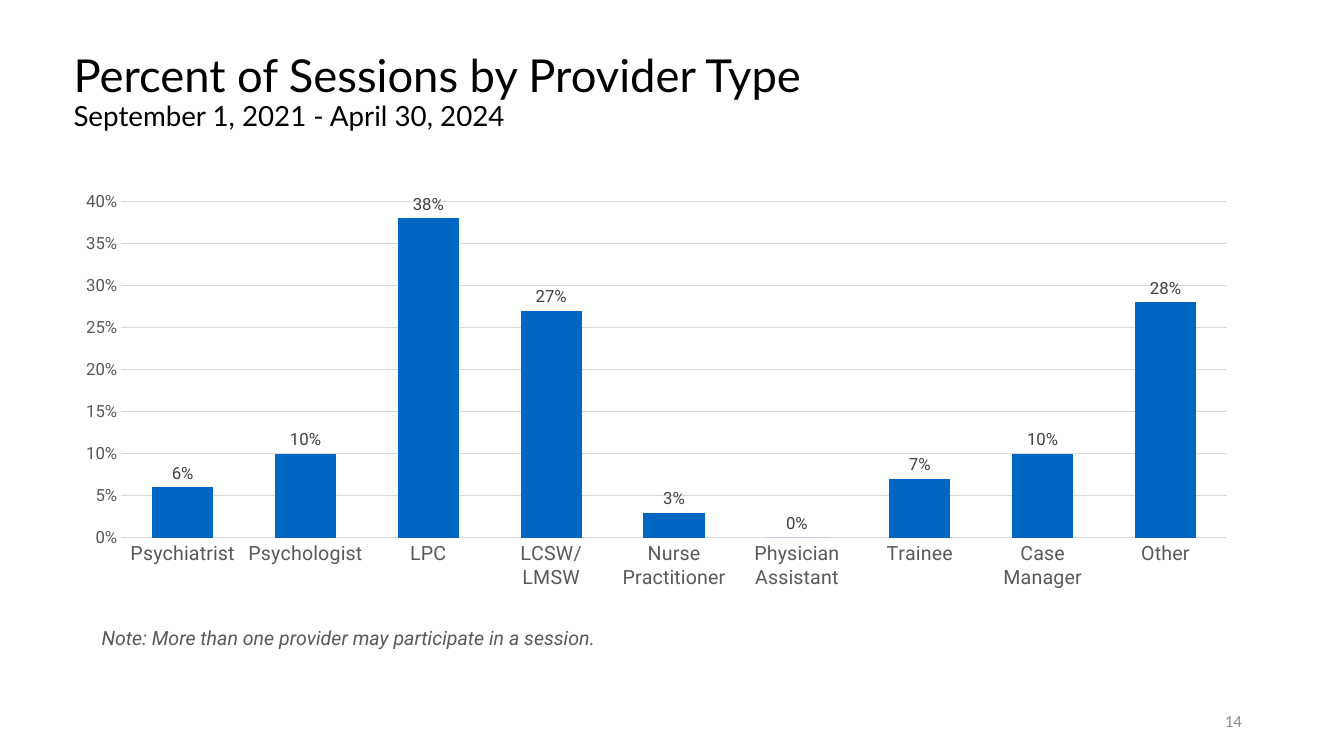
from dataclasses import dataclass

from pptx import Presentation
from pptx.chart.data import CategoryChartData
from pptx.dml.color import RGBColor
from pptx.enum.chart import XL_CHART_TYPE, XL_LABEL_POSITION, XL_TICK_MARK
from pptx.enum.text import MSO_ANCHOR, MSO_AUTO_SIZE, PP_ALIGN
from pptx.slide import Slide
from pptx.text.text import Font
from pptx.util import Cm, Pt

COLUMNS = XL_CHART_TYPE.COLUMN_CLUSTERED
OUTSIDE_END = XL_LABEL_POSITION.OUTSIDE_END
NO_TICK = XL_TICK_MARK.NONE
TOP, MIDDLE = MSO_ANCHOR.TOP, MSO_ANCHOR.MIDDLE
FIXED, GROW = MSO_AUTO_SIZE.NONE, MSO_AUTO_SIZE.SHAPE_TO_FIT_TEXT
LEFT, RIGHT = PP_ALIGN.LEFT, PP_ALIGN.RIGHT

GRAY, RULE, BLUE = "595959", "D9D9D9", "0067C3"
TITLE_ONLY = 5

SESSION_SHARES = {
    "Psychiatrist": 0.06,
    "Psychologist": 0.10,
    "LPC": 0.38,
    "LCSW/LMSW": 0.27,
    "Nurse Practitioner": 0.03,
    "Physician Assistant": 0,
    "Trainee": 0.07,
    "Case Manager": 0.10,
    "Other": 0.28,
}


@dataclass
class Area:
    left: float
    top: float
    width: float
    height: float

    def lengths(self) -> tuple[Cm, Cm, Cm, Cm]:
        return Cm(self.left), Cm(self.top), Cm(self.width), Cm(self.height)


@dataclass
class TextStyle:
    name: str
    size: float
    color: str
    italic: bool = False


@dataclass
class Caption:
    text: str
    area: Area
    style: TextStyle
    alignment: PP_ALIGN
    anchor: MSO_ANCHOR
    auto_size: MSO_AUTO_SIZE
    wrap: bool


CAPTIONS = [
    Caption("14", Area(23.93, 17.65, 7.62, 1.02), TextStyle("Calibri", 12, "8C8C8C"),
            RIGHT, MIDDLE, FIXED, True),
    Caption("Note: More than one provider may participate in a session.",
            Area(2.31, 15.65, 13.39, 0.86), TextStyle("Roboto", 14, GRAY, True),
            LEFT, TOP, GROW, False),
]


def rgb(color: str) -> RGBColor:
    return RGBColor.from_string(color)


def format_font(font: Font, style: TextStyle) -> None:
    font.name = style.name
    font.size = Pt(style.size)
    font.color.rgb = rgb(style.color)
    font.italic = style.italic
    font.bold = False


def add_title(slide: Slide) -> None:
    title = slide.shapes.title
    title.left, title.top, title.width, title.height = Area(1.6, 1.22, 30.68, 2.39).lengths()
    frame = title.text_frame
    frame.word_wrap = True
    frame.auto_size = FIXED
    frame.vertical_anchor = TOP
    paragraph = frame.paragraphs[0]
    paragraph.text = "Percent of Sessions by Provider Type\vSeptember 1, 2021 - April 30, 2024"
    paragraph.alignment = LEFT
    paragraph.line_spacing = 0.9
    for span, size in zip(paragraph.runs, (32.4, 19.8)):
        format_font(span.font, TextStyle("Lato", size, "000000"))


def add_caption(slide: Slide, caption: Caption) -> None:
    box = slide.shapes.add_textbox(*caption.area.lengths())
    frame = box.text_frame
    frame.text = caption.text
    frame.word_wrap = caption.wrap
    frame.auto_size = caption.auto_size
    frame.vertical_anchor = caption.anchor
    paragraph = frame.paragraphs[0]
    paragraph.alignment = caption.alignment
    format_font(paragraph.runs[0].font, caption.style)


def add_session_chart(slide: Slide) -> None:
    data = CategoryChartData(number_format="0%")
    data.categories = list(SESSION_SHARES)
    data.add_series("Series 1", list(SESSION_SHARES.values()))
    area = Area(1.57, 4.62, 29.95, 10.46)
    chart = slide.shapes.add_chart(COLUMNS, *area.lengths(), data).chart
    chart.has_legend = False
    chart.has_title = False
    format_font(chart.font, TextStyle("Calibri", 10, "000000"))

    providers, shares = chart.category_axis, chart.value_axis
    for axis, size in ((providers, 14), (shares, 12)):
        axis.major_tick_mark = axis.minor_tick_mark = NO_TICK
        format_font(axis.tick_labels.font, TextStyle("Roboto", size, GRAY))
    shares.minimum_scale, shares.maximum_scale, shares.major_unit = 0, 0.4, 0.05
    shares.tick_labels.number_format = "0%"
    shares.tick_labels.number_format_is_linked = False
    shares.format.line.fill.background()
    for line in (providers.format.line, shares.major_gridlines.format.line):
        line.color.rgb = rgb(RULE)
        line.width = Pt(0.75)

    plot = chart.plots[0]
    plot.gap_width, plot.overlap = 100, -27
    plot.vary_by_categories = False
    fill = plot.series[0].format.fill
    fill.solid()
    fill.fore_color.rgb = rgb(BLUE)
    labels = plot.series[0].data_labels
    labels.show_value = True
    labels.position = OUTSIDE_END
    labels.number_format = "0%"
    labels.number_format_is_linked = False
    format_font(labels.font, TextStyle("Roboto", 12, "404040"))


def main() -> None:
    deck = Presentation()
    deck.slide_width, deck.slide_height = Cm(33.87), Cm(19.05)
    slide = deck.slides.add_slide(deck.slide_layouts[TITLE_ONLY])
    add_title(slide)
    add_session_chart(slide)
    for caption in CAPTIONS:
        add_caption(slide, caption)
    deck.save("out.pptx")


if __name__ == "__main__":
    main()
